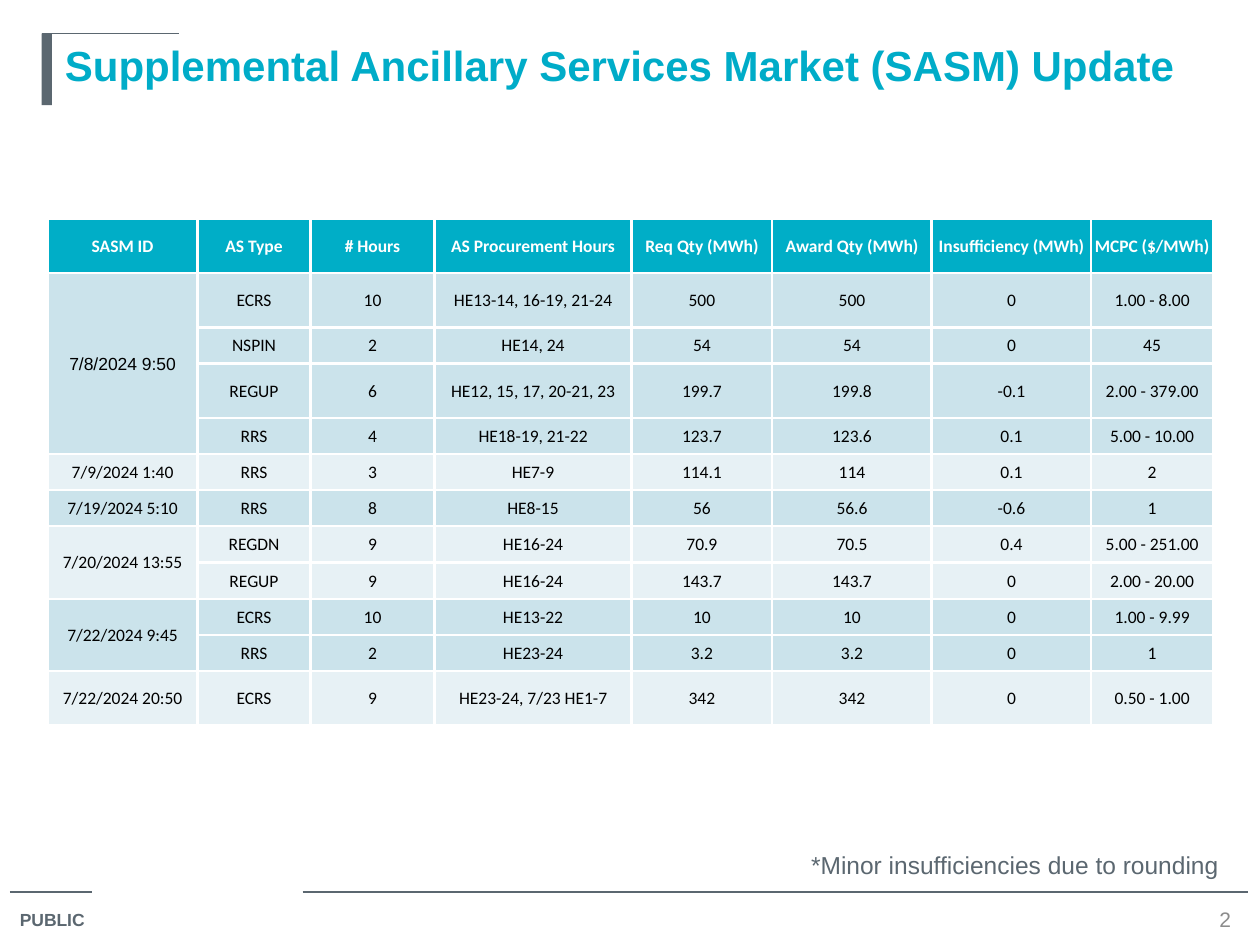
from lxml.etree import SubElement
from pptx import Presentation
from pptx.dml.color import RGBColor
from pptx.enum.shapes import MSO_CONNECTOR, MSO_SHAPE
from pptx.enum.text import MSO_ANCHOR, PP_ALIGN
from pptx.oxml.ns import qn
from pptx.util import Cm, Pt

SLATE = RGBColor(0x5B, 0x67, 0x70)
TITLE_TEAL = RGBColor(0x00, 0xAC, 0xC8)
HEADER_TEAL = RGBColor(0x00, 0xAE, 0xC7)
BAND_DARK = RGBColor(0xCB, 0xE3, 0xEB)
BAND_LIGHT = RGBColor(0xE7, 0xF1, 0xF5)
GRAY = RGBColor(0x8C, 0x8C, 0x8C)
BLACK = RGBColor(0x00, 0x00, 0x00)
WHITE = RGBColor(0xFF, 0xFF, 0xFF)

HEADINGS = ["SASM ID", "AS Type", "# Hours", "AS Procurement Hours", "Req Qty (MWh)",
            "Award Qty (MWh)", "Insufficiency (MWh)", "MCPC ($/MWh)"]
SASM_RUNS = [
    ("7/8/2024 9:50", [
        ["ECRS", "10", "HE13-14, 16-19, 21-24", "500", "500", "0", "1.00 - 8.00"],
        ["NSPIN", "2", "HE14, 24", "54", "54", "0", "45"],
        ["REGUP", "6", "HE12, 15, 17, 20-21, 23", "199.7", "199.8", "-0.1", "2.00 - 379.00"],
        ["RRS", "4", "HE18-19, 21-22", "123.7", "123.6", "0.1", "5.00 - 10.00"]]),
    ("7/9/2024 1:40", [["RRS", "3", "HE7-9", "114.1", "114", "0.1", "2"]]),
    ("7/19/2024 5:10", [["RRS", "8", "HE8-15", "56", "56.6", "-0.6", "1"]]),
    ("7/20/2024 13:55", [
        ["REGDN", "9", "HE16-24", "70.9", "70.5", "0.4", "5.00 - 251.00"],
        ["REGUP", "9", "HE16-24", "143.7", "143.7", "0", "2.00 - 20.00"]]),
    ("7/22/2024 9:45", [
        ["ECRS", "10", "HE13-22", "10", "10", "0", "1.00 - 9.99"],
        ["RRS", "2", "HE23-24", "3.2", "3.2", "0", "1"]]),
    ("7/22/2024 20:50", [["ECRS", "9", "HE23-24, 7/23 HE1-7", "342", "342", "0", "0.50 - 1.00"]]),
]
COLUMN_WIDTHS = [3.02, 2.28, 2.5, 3.97, 2.84, 3.21, 3.22, 2.45]
TALL_ROWS = {0, 1, 3, 11}
TALL, SHORT = 1.09, 0.73

prs = Presentation()
prs.slide_width, prs.slide_height = Cm(25.4), Cm(19.05)
slide = prs.slides.add_slide(prs.slide_layouts[6])


def add_label(text, left, top, width, height, size, color, bold=False, wrap=True):
    label = slide.shapes.add_textbox(Cm(left), Cm(top), Cm(width), Cm(height))
    label.text_frame.word_wrap = wrap
    label.text_frame.text = text
    font = label.text_frame.paragraphs[0].runs[0].font
    font.name, font.size, font.bold = "Arial", Pt(size), bold
    font.color.rgb = color
    return label.text_frame


def fill_cell(cell, text, fill, color, bold=False, font_name="Calibri"):
    cell.margin_left = cell.margin_right = cell.margin_top = Cm(0.02)
    cell.margin_bottom = 0
    cell.vertical_anchor = MSO_ANCHOR.MIDDLE
    properties = cell._tc.get_or_add_tcPr()
    for side in ("a:lnL", "a:lnR", "a:lnT", "a:lnB"):
        border = SubElement(properties, qn(side), w=str(Pt(1.5)))
        SubElement(SubElement(border, qn("a:solidFill")), qn("a:srgbClr"), val=str(WHITE))
    cell.fill.solid()
    cell.fill.fore_color.rgb = fill
    cell.text_frame.text = text
    paragraph = cell.text_frame.paragraphs[0]
    paragraph.alignment = PP_ALIGN.CENTER
    font = paragraph.font if not text else paragraph.runs[0].font
    font.name, font.size, font.bold = font_name, Pt(10), bold
    font.color.rgb = color


for start, end, y in [(0.2, 1.85, 17.98), (6.1, 25.15, 17.98), (0.84, 3.6, 0.68)]:
    rule = slide.shapes.add_connector(MSO_CONNECTOR.STRAIGHT, Cm(start), Cm(y), Cm(end), Cm(y))
    rule.line.color.rgb = SLATE
    rule.line.width = Pt(0.75)
    SubElement(rule._element.spPr, qn("a:effectLst"))

title_bar = slide.shapes.add_shape(MSO_SHAPE.RECTANGLE, Cm(0.84), Cm(0.68), Cm(0.21), Cm(1.44))
title_bar.shadow.inherit = False
title_bar.fill.solid()
title_bar.fill.fore_color.rgb = SLATE
title_bar.line.fill.background()

add_label("Supplemental Ancillary Services Market (SASM) Update",
          1.06, 0.68, 23.5, 1.44, 24, TITLE_TEAL, bold=True)
add_label("PUBLIC", 0.15, 18.21, 1.96, 0.7, 10, SLATE, bold=True, wrap=False)
page_number = add_label("2", 24.33, 18.24, 0.64, 0.58, 12, GRAY, wrap=False)
page_number.vertical_anchor = MSO_ANCHOR.MIDDLE
page_number.paragraphs[0].alignment = PP_ALIGN.CENTER
add_label("*Minor insufficiencies due to rounding", 16.1, 17.02, 9.14, 0.86, 14, SLATE)

row_count = 1 + sum(len(services) for _, services in SASM_RUNS)
sasm_table = slide.shapes.add_table(row_count, len(HEADINGS), Cm(0.96), Cm(4.42),
                                    Cm(sum(COLUMN_WIDTHS)), Cm(10.2)).table
for column, width in zip(sasm_table.columns, COLUMN_WIDTHS):
    column.width = Cm(width)
for index, row in enumerate(sasm_table.rows):
    row.height = Cm(TALL if index in TALL_ROWS else SHORT)

for column, heading in enumerate(HEADINGS):
    fill_cell(sasm_table.cell(0, column), heading, HEADER_TEAL, WHITE, bold=True)

first_row = 1
for run_index, (sasm_id, services) in enumerate(SASM_RUNS):
    band = BAND_LIGHT if run_index % 2 else BAND_DARK
    for offset, service in enumerate(services):
        id_text = "" if offset else sasm_id
        for column, text in enumerate([id_text] + service):
            id_font = "Arial" if run_index == 0 and column == 0 else "Calibri"
            fill_cell(sasm_table.cell(first_row + offset, column), text, band, BLACK,
                      font_name=id_font)
    if len(services) > 1:
        last_row = first_row + len(services) - 1
        sasm_table.cell(first_row, 0).merge(sasm_table.cell(last_row, 0))
    first_row += len(services)

prs.save("out.pptx")
